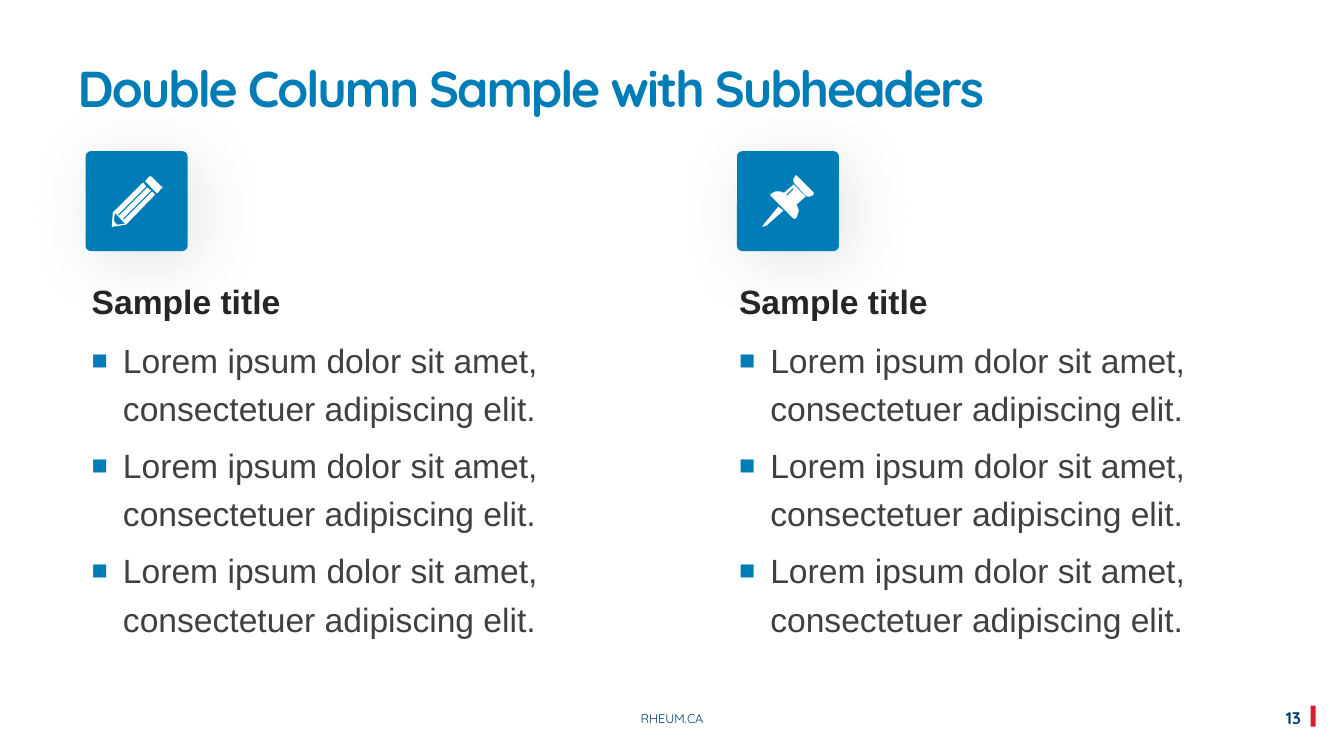
from pptx import Presentation
from pptx.dml.color import RGBColor
from pptx.enum.shapes import MSO_SHAPE
from pptx.enum.text import MSO_ANCHOR, MSO_AUTO_SIZE, PP_ALIGN
from pptx.oxml import parse_xml
from pptx.oxml.ns import nsdecls
from pptx.util import Inches, Pt

BLUE = RGBColor(0x00, 0x7D, 0xB6)
NAVY = RGBColor(0x00, 0x3E, 0x6B)
RED = RGBColor(0xDA, 0x1A, 0x32)
DARK = RGBColor(0x26, 0x26, 0x26)
GREY = RGBColor(0x40, 0x40, 0x40)
WHITE = RGBColor(0xFF, 0xFF, 0xFF)

TITLE = "Double Column Sample with Subheaders"
BULLETS = ["Lorem ipsum dolor sit amet, consectetuer adipiscing elit."] * 3

PENCIL = [
    [[(64, 25), (63, 25), (59, 30), (71, 42), (75, 37), (76, 37), (76, 35),
      (75, 35), (65, 25)]],
    [[(29, 61), (39, 72), (31, 73), (28, 69), (29, 62)],
     [(57, 31), (28, 60), (27, 61), (26, 73), (26, 75), (27, 75), (39, 73),
      (40, 73), (69, 43), (66, 40), (38, 68), (37, 67), (65, 39), (61, 36),
      (33, 64), (32, 63), (60, 35)]],
]
PIN = [
    [[(41, 55), (27, 72), (25, 75), (29, 74), (46, 59)]],
    [[(58, 24), (57, 26), (56, 27), (56, 30), (57, 32), (68, 44), (70, 45),
      (72, 45), (75, 44), (76, 43), (76, 41), (60, 25), (59, 24)]],
    [[(56, 37), (56, 38), (50, 44), (49, 44), (49, 43), (55, 37)],
     [(56, 33), (47, 41), (45, 41), (43, 40), (38, 40), (36, 41), (34, 42),
      (33, 43), (33, 44), (34, 45), (56, 67), (58, 67), (59, 66), (60, 63),
      (61, 60), (61, 58), (60, 55), (59, 53), (68, 45)]],
]
COLUMNS = [
    {"head": "Sample title", "left": 0.81, "tile": 0.85, "icon": PENCIL},
    {"head": "Sample title", "left": 7.23, "tile": 7.31, "icon": PIN},
]
FOOTERS = [
    ("13", (12.16, 6.97, 0.84, 0.3), 12, True, PP_ALIGN.RIGHT, MSO_ANCHOR.MIDDLE),
    ("RHEUM.CA", (5.95, 7, 1.43, 0.25), 9, False, PP_ALIGN.CENTER, MSO_ANCHOR.TOP),
]
TILE_TOP, TILE_W, TILE_H = 1.5, 1.01, 0.99


def fill_text(sp, box, lines, size, font, color, bold=False,
              align=PP_ALIGN.LEFT, anchor=MSO_ANCHOR.TOP, bullets=False):
    """Place a text shape and write its formatted paragraphs."""
    sp.left, sp.top, sp.width, sp.height = map(Inches, box)
    tf = sp.text_frame
    tf.text = "\n".join(lines)
    tf.word_wrap = True
    tf.auto_size = MSO_AUTO_SIZE.SHAPE_TO_FIT_TEXT
    tf.vertical_anchor = anchor
    for p in tf.paragraphs:
        p.alignment = align
        p.space_before = Pt(0)
        if bullets:
            add_bullet(p)
        for r in p.runs:
            r.font.size, r.font.name, r.font.bold = Pt(size), font, bold
            r.font.color.rgb = color
    return tf.paragraphs[0]


def add_bullet(p):
    """Give a paragraph a square bullet with a hanging indent."""
    p.line_spacing = 1.2
    p.space_after = Pt(6)
    pPr = p._p.get_or_add_pPr()
    pPr.set("marL", str(Inches(0.31)))
    pPr.set("indent", str(Inches(-0.31)))
    ns = nsdecls("a")
    for xml in (f'<a:buClr {ns}><a:srgbClr val="{BLUE}"/></a:buClr>',
                f'<a:buSzPct {ns} val="80000"/>',
                f'<a:buFont {ns} typeface="Arial"/>',
                f'<a:buChar {ns} char="■"/>'):
        pPr.append(parse_xml(xml))


def paint(sp, color):
    """Fill a shape with one colour, without line or shadow."""
    sp.shadow.inherit = False
    sp.fill.solid()
    sp.fill.fore_color.rgb = color
    sp.line.fill.background()


def add_tile(slide, left):
    """Add a rounded icon tile with a soft shadow."""
    sp = slide.shapes.add_shape(MSO_SHAPE.ROUNDED_RECTANGLE, Inches(left),
                                Inches(TILE_TOP), Inches(TILE_W), Inches(TILE_H))
    sp.adjustments[0] = 0.05
    paint(sp, BLUE)
    effects = sp._element.spPr.find(
        "{http://schemas.openxmlformats.org/drawingml/2006/main}effectLst")
    effects.append(parse_xml(
        f'<a:outerShdw {nsdecls("a")} blurRad="{Pt(50)}" dist="{Pt(10)}" '
        f'dir="{46 * 60000}" algn="ctr" rotWithShape="0"><a:srgbClr val="000000">'
        '<a:alpha val="11000"/></a:srgbClr></a:outerShdw>'))


def add_icon(slide, left, icon):
    """Draw an icon from outlines in hundredths of an inch within its tile."""
    for contours in icon:
        fb = slide.shapes.build_freeform(*contours[0][0], scale=Inches(0.01))
        fb.add_line_segments(contours[0][1:], close=True)
        for points in contours[1:]:
            fb.move_to(*points[0])
            fb.add_line_segments(points[1:], close=True)
        paint(fb.convert_to_shape(Inches(left), Inches(TILE_TOP)), WHITE)


def main():
    """Build the two-column slide."""
    prs = Presentation()
    prs.slide_width, prs.slide_height = Inches(13.33), Inches(7.5)
    slide = prs.slides.add_slide(prs.slide_layouts.get_by_name("Comparison"))
    title, *bodies = slide.placeholders

    for text, box, size, bold, align, anchor in FOOTERS:
        sp = slide.shapes.add_textbox(0, 0, 0, 0)
        fill_text(sp, box, [text], size, "Quicksand", NAVY, bold, align, anchor)
    bar = slide.shapes.add_shape(MSO_SHAPE.RECTANGLE, Inches(13), Inches(7),
                                 Inches(0.05), Inches(0.21))
    paint(bar, RED)

    p = fill_text(title, (0.67, 0.58, 11.68, 0.65), [TITLE], 36, "Quicksand",
                  BLUE, bold=True)
    p.line_spacing = 0.9
    p.runs[0].font._element.set("spc", "-150")

    for col, head, body in zip(COLUMNS, bodies[::2], bodies[1::2]):
        fill_text(head, (col["left"], 2.74, 2.67, 0.5), [col["head"]], 24,
                  "Arial", DARK, bold=True)
        fill_text(body, (col["left"], 3.24, 5.54, 3.13), BULLETS, 24, "Arial",
                  GREY, bullets=True)
        add_tile(slide, col["tile"])
        add_icon(slide, col["tile"], col["icon"])

    prs.save("out.pptx")


if __name__ == "__main__":
    main()
